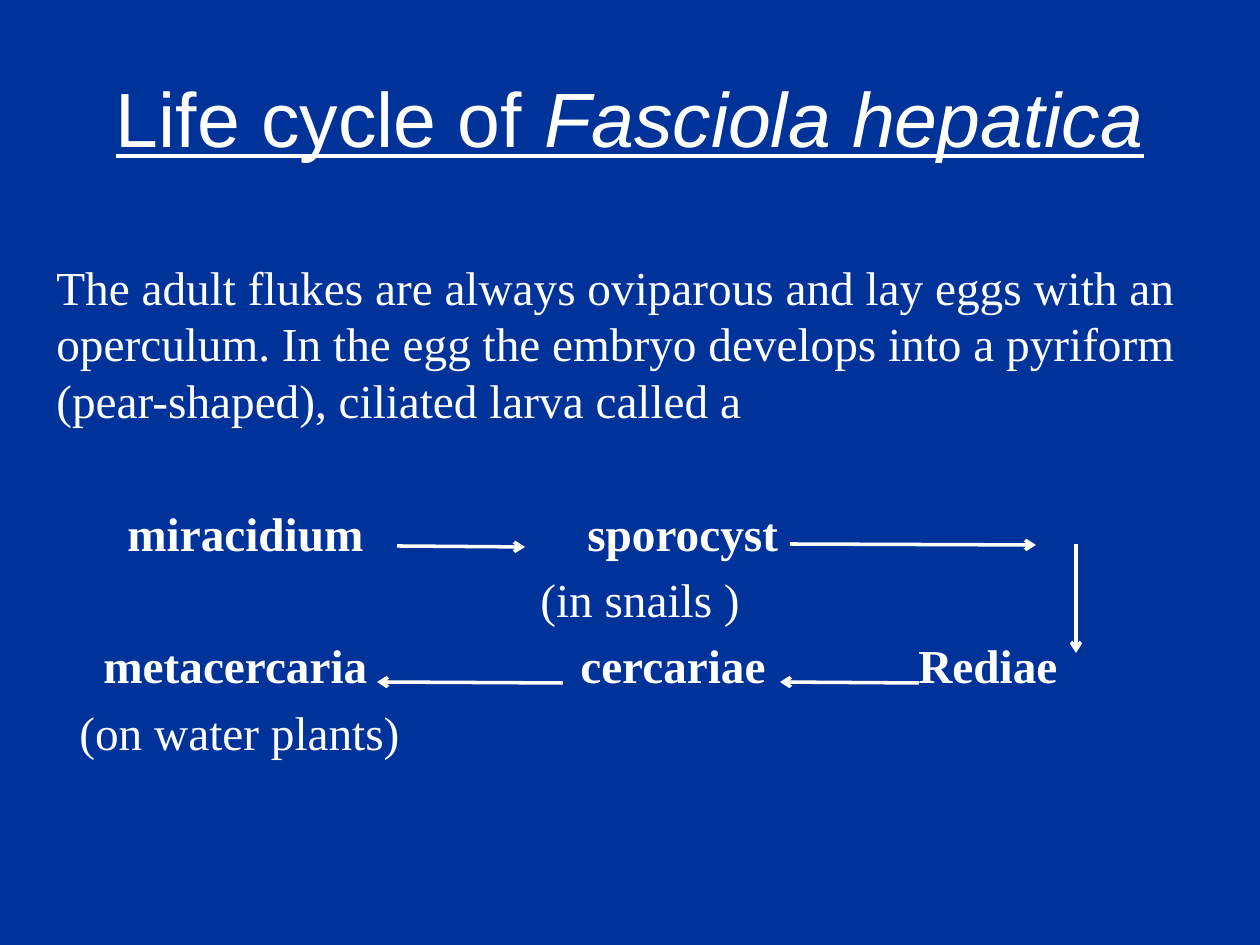
"""Build the slide on the life cycle of Fasciola hepatica."""
from dataclasses import dataclass

from lxml import etree
from pptx import Presentation
from pptx.dml.color import RGBColor
from pptx.enum.shapes import MSO_CONNECTOR
from pptx.enum.text import MSO_ANCHOR, PP_ALIGN
from pptx.oxml.ns import qn
from pptx.util import Emu, Pt

STRAIGHT = MSO_CONNECTOR.STRAIGHT
MIDDLE = MSO_ANCHOR.MIDDLE
TOP = MSO_ANCHOR.TOP
CENTER = PP_ALIGN.CENTER
LEFT = PP_ALIGN.LEFT

BLUE = RGBColor(0x00, 0x33, 0x99)
WHITE = RGBColor(0xFF, 0xFF, 0xFF)
EMU_PER_PX = 914400 / 126
TITLE_FONT = {"name": "Arial", "size": Pt(44), "underline": True}
BODY_FONT = {"name": "Times New Roman", "size": Pt(27)}


@dataclass(frozen=True)
class Row:
    """One paragraph, with its words placed at tab stops."""

    words: tuple[str, ...]
    stops: tuple[int, ...] = ()
    bold: bool = False
    before: float = 5.6


@dataclass(frozen=True)
class Arrow:
    """A straight arrow between two points in px."""

    start: tuple[int, int]
    end: tuple[int, int]


ROWS = (
    Row(("The adult flukes are always oviparous and lay eggs with an operculum. "
         "In the egg the embryo develops into a pyriform (pear-shaped), "
         "ciliated larva called a",), before=1.5),
    Row(("miracidium", "sporocyst"), (71, 531), True, 43.7),
    Row(("(in snails )",), (484,)),
    Row(("metacercaria", "cercariae", "Rediae"), (47, 524, 862), True),
    Row(("(on water plants)",), (23,)),
)
ARROWS = (
    Arrow((397, 546), (525, 547)),
    Arrow((790, 544), (1036, 545)),
    Arrow((1076, 544), (1076, 653)),
    Arrow((919, 683), (780, 682)),
    Arrow((563, 683), (377, 682)),
)


def px(length: int) -> Emu:
    """Turn px into EMU."""
    return Emu(round(length * EMU_PER_PX))


def set_format(target, values: dict) -> None:
    """Set each named attribute on the target."""
    for name, value in values.items():
        setattr(target, name, value)


def add_span(para, text: str, font: dict) -> None:
    """Add a white run of text."""
    span = para.add_run()
    span.text = text
    set_format(span.font, font)
    span.font.color.rgb = WHITE


def add_title(page) -> None:
    """Place and fill the title."""
    title = page.shapes.title
    set_format(title, {"left": px(63), "top": px(38), "width": px(1134), "height": px(158)})
    set_format(title.text_frame, {"word_wrap": True, "vertical_anchor": MIDDLE})
    para = title.text_frame.paragraphs[0]
    para.alignment = CENTER
    add_span(para, "Life cycle of ", TITLE_FONT)
    add_span(para, "Fasciola hepatica", TITLE_FONT | {"italic": True})


def add_row(para, row: Row) -> None:
    """Fill one paragraph and set its tab stops."""
    set_format(para, {"alignment": LEFT, "line_spacing": Pt(32.3),
                      "space_before": Pt(row.before)})
    if row.stops:
        properties = para._p.get_or_add_pPr()
        tabs = etree.SubElement(properties, qn("a:tabLst"))
        for stop in row.stops:
            etree.SubElement(tabs, qn("a:tab"), pos=str(px(stop)), algn="l")
    lead = "\t" if row.stops else ""
    add_span(para, lead + "\t".join(row.words), BODY_FONT | {"bold": row.bold})


def add_body(page, rows: tuple[Row, ...]) -> None:
    """Add the text box with all rows."""
    box = page.shapes.add_textbox(px(44), px(252), px(1172), px(630))
    frame = box.text_frame
    set_format(frame, {"word_wrap": True, "vertical_anchor": TOP})
    for index, row in enumerate(rows):
        add_row(frame.add_paragraph() if index else frame.paragraphs[0], row)


def add_arrow(page, arrow: Arrow) -> None:
    """Draw one white arrow."""
    points = map(px, arrow.start + arrow.end)
    connector = page.shapes.add_connector(STRAIGHT, *points)
    connector.line.color.rgb = WHITE
    connector.line.width = Pt(2)
    etree.SubElement(connector.line._get_or_add_ln(), qn("a:tailEnd"), type="arrow")
    etree.SubElement(connector._element.spPr, qn("a:effectLst"))


def main() -> None:
    """Build and save the deck."""
    deck = Presentation()
    set_format(deck, {"slide_width": px(1260), "slide_height": px(945)})
    page = deck.slides.add_slide(deck.slide_layouts.get_by_name("Title Only"))
    page.background.fill.solid()
    page.background.fill.fore_color.rgb = BLUE
    add_title(page)
    add_body(page, ROWS)
    for arrow in ARROWS:
        add_arrow(page, arrow)
    deck.save("out.pptx")


if __name__ == "__main__":
    main()
